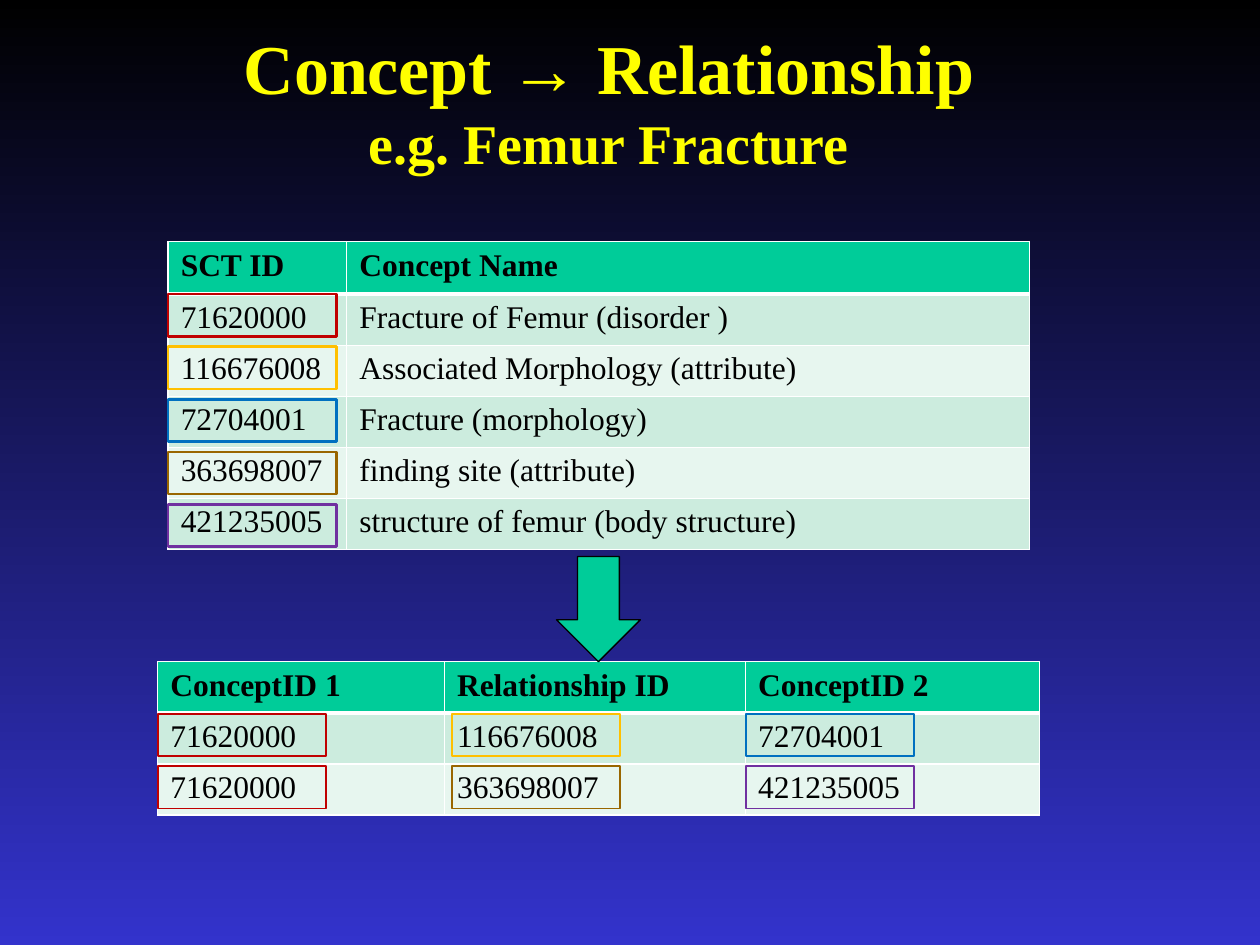
from dataclasses import dataclass

from lxml.etree import SubElement
from pptx import Presentation
from pptx.dml.color import RGBColor
from pptx.enum.shapes import MSO_SHAPE
from pptx.enum.text import MSO_ANCHOR, PP_ALIGN
from pptx.oxml.ns import qn
from pptx.util import Cm, Pt


@dataclass(frozen=True)
class Theme:
    font: str = "Times New Roman"
    title: str = "FFFF00"
    ink: str = "000000"
    accent: str = "00CC99"
    bands: tuple = ("CCECDE", "E7F6EF")
    grid: str = "FFFFFF"
    backdrop: tuple = ("000000", "3333CC")
    title_size: int = 40
    subtitle_size: int = 32
    table_size: int = 18
    grid_width: int = 1
    header_rule: int = 3


@dataclass(frozen=True)
class Concept:
    sct_id: str
    name: str
    color: str


@dataclass(frozen=True)
class TableSpec:
    """Lengths in cm; the marker fields place the frames around the IDs."""
    left: float
    top: float
    columns: tuple
    header_height: float
    rows: list
    marker_top: float
    marker_step: float
    marker_line: float


THEME = Theme()
ROW_HEIGHT = 1.03
MARKER_WIDTH, MARKER_HEIGHT, MARKER_PITCH = 3.39, 0.85, 1.06

CONCEPTS = [
    Concept("71620000", "Fracture of Femur (disorder )", "C00000"),
    Concept("116676008", "Associated Morphology (attribute)", "FFC000"),
    Concept("72704001", "Fracture (morphology)", "0070C0"),
    Concept("363698007", "finding site (attribute)", "996600"),
    Concept("421235005", "structure of femur (body structure)", "7030A0"),
]
COLOR_BY_ID = {concept.sct_id: concept.color for concept in CONCEPTS}
FEMUR_FRACTURE, MORPHOLOGY, FRACTURE, SITE, FEMUR = COLOR_BY_ID

CONCEPT_TABLE = TableSpec(
    3.39, 4.87, (3.6, 13.76), 1.06,
    [("SCT ID", "Concept Name")] + [(c.sct_id, c.name) for c in CONCEPTS],
    5.93, 0, 1.5)
RELATIONSHIP_TABLE = TableSpec(
    3.18, 13.34, (5.78, 6.07, 5.93), ROW_HEIGHT,
    [("ConceptID 1", "Relationship ID", "ConceptID 2"),
     (FEMUR_FRACTURE, MORPHOLOGY, FRACTURE),
     (FEMUR_FRACTURE, SITE, FEMUR)],
    14.39, 5.93, 1)


def rgb(value: str) -> RGBColor:
    return RGBColor.from_string(value)


def style_run(run, size: int, color: str, bold: bool) -> None:
    formats = {"name": THEME.font, "size": Pt(size), "bold": bold}
    for attribute, value in formats.items():
        setattr(run.font, attribute, value)
    run.font.color.rgb = rgb(color)


def add_background(slide) -> None:
    fill = slide.background.fill
    fill.gradient()
    fill.gradient_angle = 270
    for stop, color in zip(fill.gradient_stops, THEME.backdrop):
        stop.color.rgb = rgb(color)


def add_title(slide) -> None:
    title = slide.shapes.title
    position = {"left": 1.48, "top": 0.42, "width": 21.59, "height": 3.18}
    for attribute, length in position.items():
        setattr(title, attribute, Cm(length))
    title.text_frame.vertical_anchor = MSO_ANCHOR.MIDDLE
    heading = title.text_frame.paragraphs[0]
    heading.alignment = PP_ALIGN.CENTER
    heading.text = "Concept → Relationship\ve.g. Femur Fracture"
    for run, size in zip(heading.runs, (THEME.title_size, THEME.subtitle_size)):
        style_run(run, size, THEME.title, True)


def set_borders(cell, row: int) -> None:
    """Draw the white grid, with a heavier rule under the header row."""
    widths = {"a:lnL": THEME.grid_width, "a:lnR": THEME.grid_width,
              "a:lnT": THEME.header_rule if row == 1 else THEME.grid_width,
              "a:lnB": THEME.header_rule if row == 0 else THEME.grid_width}
    properties = cell._tc.get_or_add_tcPr()
    for tag, width in widths.items():
        border = SubElement(properties, qn(tag), w=str(Pt(width)))
        solid = SubElement(border, qn("a:solidFill"))
        SubElement(solid, qn("a:srgbClr"), val=THEME.grid)


def add_table(slide, spec: TableSpec) -> None:
    height = spec.header_height + ROW_HEIGHT * (len(spec.rows) - 1)
    table = slide.shapes.add_table(
        len(spec.rows), len(spec.columns), Cm(spec.left), Cm(spec.top),
        Cm(sum(spec.columns)), Cm(height)).table
    for column, width in zip(table.columns, spec.columns):
        column.width = Cm(width)
    for r, values in enumerate(spec.rows):
        table.rows[r].height = Cm(ROW_HEIGHT if r else spec.header_height)
        for c, value in enumerate(values):
            cell = table.cell(r, c)
            set_borders(cell, r)
            cell.fill.solid()
            cell.fill.fore_color.rgb = rgb(
                THEME.bands[(r - 1) % 2] if r else THEME.accent)
            cell.text = value
            style_run(cell.text_frame.paragraphs[0].runs[0],
                      THEME.table_size, THEME.ink, r == 0)


def add_outlined(slide, preset: MSO_SHAPE, left: float, top: float,
                 width: float, height: float, color: str, line: float):
    shape = slide.shapes.add_shape(
        preset, Cm(left), Cm(top), Cm(width), Cm(height))
    shape.shadow.inherit = False
    shape.fill.background()
    shape.line.color.rgb = rgb(color)
    shape.line.width = Pt(line)
    return shape


def add_markers(slide, spec: TableSpec) -> None:
    """Frame every concept ID in the colour of its concept."""
    for r, values in enumerate(spec.rows[1:]):
        for c, value in enumerate(values):
            if value in COLOR_BY_ID:
                add_outlined(slide, MSO_SHAPE.RECTANGLE,
                             spec.left + c * spec.marker_step,
                             spec.marker_top + r * MARKER_PITCH,
                             MARKER_WIDTH, MARKER_HEIGHT,
                             COLOR_BY_ID[value], spec.marker_line)


def main() -> None:
    presentation = Presentation()
    presentation.slide_width, presentation.slide_height = Cm(25.4), Cm(19.05)
    slide = presentation.slides.add_slide(presentation.slide_layouts[5])
    add_background(slide)
    add_title(slide)
    tables = (CONCEPT_TABLE, RELATIONSHIP_TABLE)
    for spec in tables:
        add_table(slide, spec)
    arrow = add_outlined(slide, MSO_SHAPE.DOWN_ARROW,
                         11.22, 11.22, 1.69, 2.12, THEME.ink, 0.75)
    arrow.fill.solid()
    arrow.fill.fore_color.rgb = rgb(THEME.accent)
    for spec in tables:
        add_markers(slide, spec)
    presentation.save("out.pptx")


if __name__ == "__main__":
    main()
